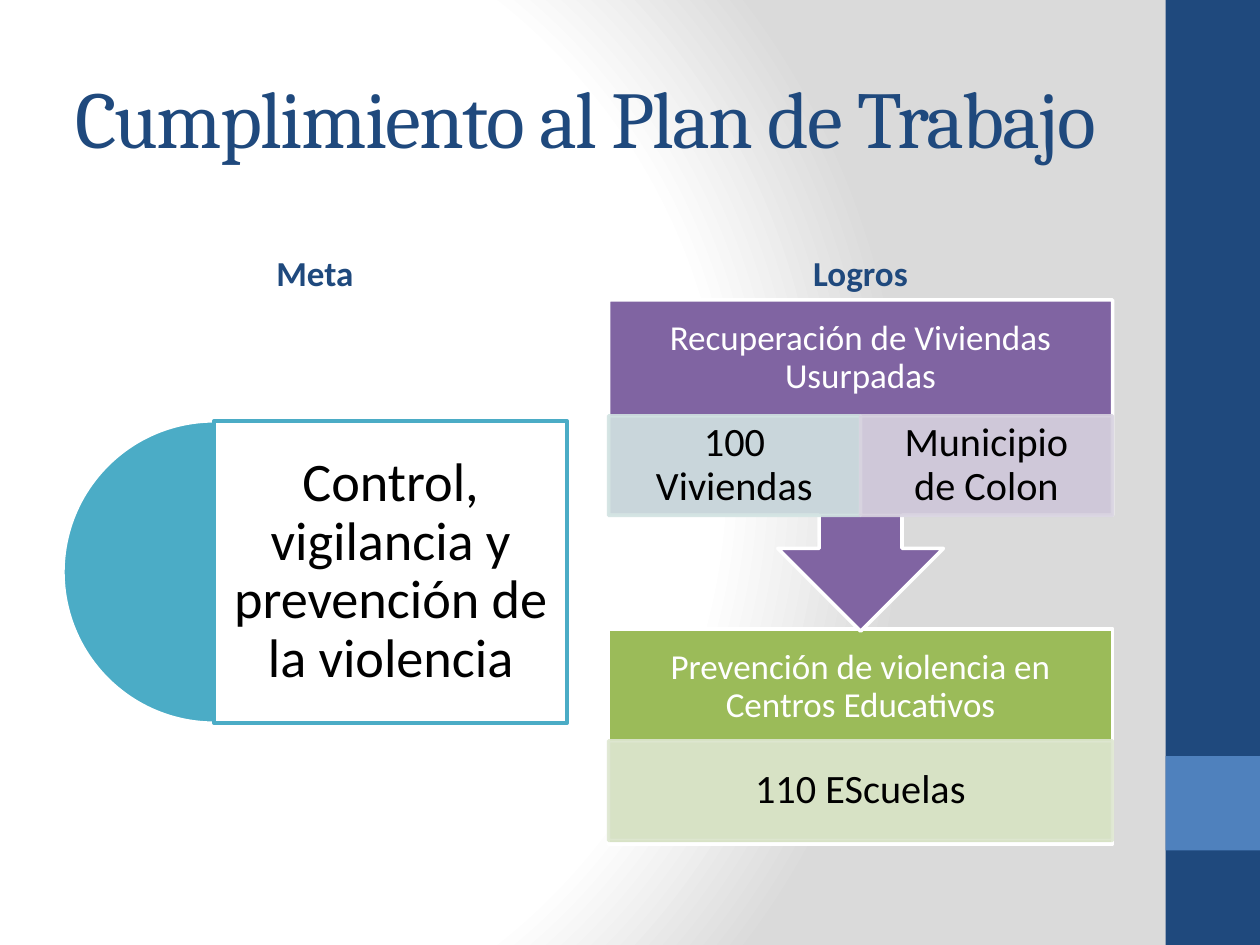
from pptx import Presentation
from pptx.dml.color import RGBColor
from pptx.enum.shapes import MSO_SHAPE
from pptx.enum.text import MSO_ANCHOR, PP_ALIGN
from pptx.oxml import parse_xml
from pptx.util import Inches, Pt
from lxml import etree

RECT, PIE, CALLOUT = MSO_SHAPE.RECTANGLE, MSO_SHAPE.PIE, MSO_SHAPE.UP_ARROW_CALLOUT
MID, LOW = MSO_ANCHOR.MIDDLE, MSO_ANCHOR.BOTTOM
LEFT, CENTER = PP_ALIGN.LEFT, PP_ALIGN.CENTER
NS = "http://schemas.openxmlformats.org/drawingml/2006/main"
NAVY, BLUE, TEAL = "1F497D", "4F81BD", "4BACC6"
PLUM, GREEN, WHITE, BLACK = "8064A2", "9BBB59", "FFFFFF", "000000"

# Grid in inches: two columns of equal width, and a bar on the right
COL, LEFT_X, RIGHT_X = 4, 0.5, 4.83
BAR = 0.75
HEAD, SUB = 0.92, 0.79  # rows inside each block of results
TOP, NEXT = 2.38, 4.99  # where the two blocks start
DISC, DISC_Y = 2.4, 3.34

deck = Presentation()
deck.slide_width, deck.slide_height = Inches(10), Inches(7.5)
slide = deck.slides.add_slide(deck.slide_layouts[6])


def draw(kind, box, fill, line=None, alpha=100):
    """Add a preset shape; alpha is the opacity in percent of all parts in the fill colour."""
    shape = slide.shapes.add_shape(kind, *[Inches(n) for n in box])
    shape.shadow.inherit = False
    shape.fill.solid()
    shape.fill.fore_color.rgb = RGBColor.from_string(fill)
    if line:
        shape.line.color.rgb = RGBColor.from_string(line)
        shape.line.width = Pt(2)
    else:
        shape.line.fill.background()
    if alpha < 100:
        for tone in shape._element.spPr.iter(f"{{{NS}}}srgbClr"):
            if tone.get("val") == fill:
                etree.SubElement(tone, f"{{{NS}}}alpha", val=str(alpha * 1000))
    return shape


def write(text, box, size, color, pad=(0.1, 0.05), anchor=MID, align=CENTER, gap=0.9, font="Calibri"):
    """Add a text box and return the font of its run."""
    frame = slide.shapes.add_textbox(*[Inches(n) for n in box]).text_frame
    frame.word_wrap = True
    frame.vertical_anchor = anchor
    frame.margin_left = frame.margin_right = Inches(pad[0])
    frame.margin_top = frame.margin_bottom = Inches(pad[1])
    frame.text = text
    para = frame.paragraphs[0]
    para.alignment, para.line_spacing = align, gap
    face = para.runs[0].font
    face.name, face.size = font, Pt(size)
    face.color.rgb = RGBColor.from_string(color)
    return face


# Background: white that turns grey towards the right
stops = "".join(f'<a:gs pos="{at}000"><a:srgbClr val="{tone}"/></a:gs>'
                for at, tone in ((0, WHITE), (75, WHITE), (100, "DADADA")))
slide.background.fill.solid()
back = slide._element.cSld.bg.bgPr
back.replace(back[0], parse_xml(
    f'<a:gradFill xmlns:a="{NS}" rotWithShape="1"><a:gsLst>{stops}</a:gsLst><a:path path="circle">'
    '<a:fillToRect l="20000" t="50000" r="100000" b="50000"/></a:path></a:gradFill>'))

# Bar on the right
draw(RECT, (10 - BAR, 0, BAR, 7.5), NAVY)
draw(RECT, (10 - BAR, 6, BAR, BAR), BLUE)

# Title and column heads
title = write("Cumplimiento al Plan de Trabajo", (LEFT_X, 0.3, 8.33, 1.25), 46, NAVY,
              align=LEFT, gap=1.0, font="Cambria")
title._element.set("spc", "-100")
for text, x in (("Meta", LEFT_X), ("Logros", RIGHT_X)):
    write(text, (x, 1.68, COL, 0.7), 20, NAVY, anchor=LOW, gap=1.0).bold = True

# Goal: half disc and panel
disc = draw(PIE, (LEFT_X, DISC_Y, DISC, DISC), TEAL, WHITE)
disc.adjustments[0], disc.adjustments[1] = 54, 162  # 90 and 270 degrees
panel = (LEFT_X + DISC / 2, DISC_Y, COL - DISC / 2, DISC)
draw(RECT, panel, WHITE, TEAL, 90)
write("Control, vigilancia y prevención de la violencia", panel, 31, BLACK, (0.13, 0.13))

# Results: the lower block first, so that the arrow lies over it
blocks = (
    (RECT, NEXT, 1.71, GREEN, "Prevención de violencia en Centros Educativos",
     (("110 EScuelas", "DEE7D1"),), 0.89),
    (CALLOUT, TOP, 2.63, PLUM, "Recuperación de Viviendas Usurpadas",
     (("100 Viviendas", "D2E3E2"), ("Municipio de Colon", "D8D3E0")), HEAD),
)
for kind, y, high, fill, head, cells, drop in blocks:
    block = draw(kind, (RIGHT_X, y, COL, high), fill, WHITE)
    if kind == CALLOUT:
        block.rotation = 180
    write(head, (RIGHT_X, y, COL, HEAD), 20, WHITE, (0.16, 0.16))
    wide = COL / len(cells)
    for i, (text, tint) in enumerate(cells):
        cell = (RIGHT_X + i * wide, y + drop, wide, SUB)
        draw(RECT, cell, tint, tint, 90)
        write(text, cell, 23, BLACK, (0.18, 0.03))

deck.save("out.pptx")
